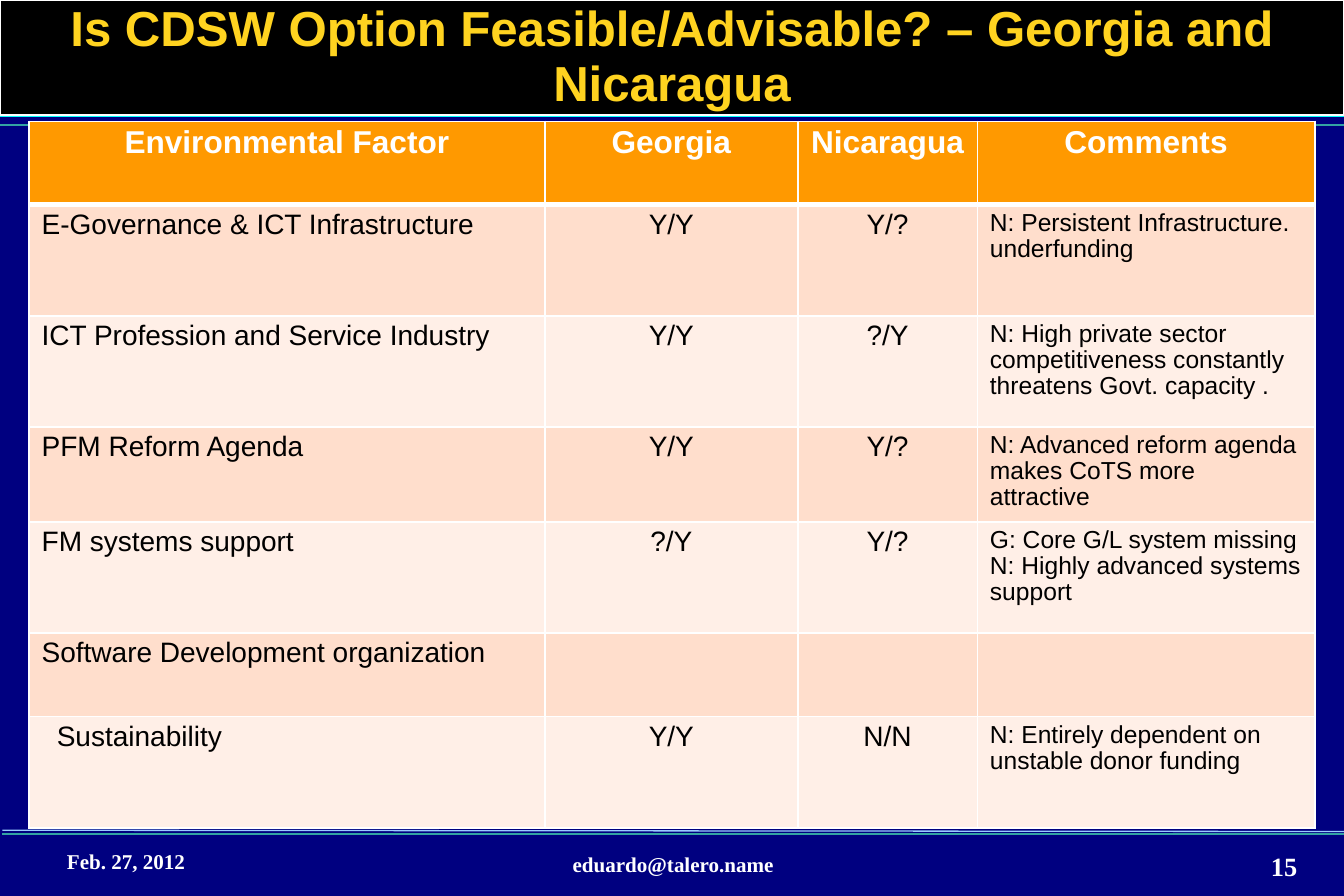
from dataclasses import dataclass

from lxml import etree
from pptx import Presentation
from pptx.dml.color import RGBColor
from pptx.enum.shapes import MSO_CONNECTOR
from pptx.enum.text import MSO_ANCHOR, MSO_AUTO_SIZE, PP_ALIGN
from pptx.oxml.ns import qn
from pptx.util import Inches, Pt

LEFT, CENTER, RIGHT = PP_ALIGN.LEFT, PP_ALIGN.CENTER, PP_ALIGN.RIGHT
MIDDLE = MSO_ANCHOR.MIDDLE
NO_AUTOFIT = MSO_AUTO_SIZE.NONE
STRAIGHT = MSO_CONNECTOR.STRAIGHT

NAVY, BLACK, WHITE, YELLOW = "000080", "000000", "FFFFFF", "FFD320"
HEADER_FILL = "FF9900"
BAND_FILLS = ("FFDECC", "FFEFE7")
SANS, SERIF = "Arial", "Times New Roman"
SLIDE_WIDTH, SLIDE_HEIGHT = 10.63, 7.09


@dataclass(frozen=True)
class TextStyle:
    size: float
    color: str = BLACK
    bold: bool = False
    font: str = SANS
    align: PP_ALIGN = LEFT
    spacing: float = 0.93


@dataclass(frozen=True)
class Rule:
    left: float
    top: float
    right: float
    bottom: float
    color: str


@dataclass(frozen=True)
class FooterText:
    text: str
    left: float
    top: float
    width: float
    height: float
    size: float
    align: PP_ALIGN


@dataclass(frozen=True)
class FactorRow:
    factor: str
    height: float
    georgia: str = ""
    nicaragua: str = ""
    comments: str = ""
    indent: float = 0


TITLE = TextStyle(28, YELLOW, True, align=CENTER)
HEADER = TextStyle(18, WHITE, True, align=CENTER)
FACTOR = TextStyle(16)
RATING = TextStyle(16, align=CENTER)
COMMENT = TextStyle(14)
COLUMN_STYLES = (FACTOR, RATING, RATING, COMMENT)
COLUMN_WIDTHS = (4.08, 2, 1.42, 2.67)
HEADINGS = ("Environmental Factor", "Georgia", "Nicaragua", "Comments")
SHORT_ROW, TALL_ROW = 0.66, 0.88

FACTOR_ROWS = (
    FactorRow("E-Governance & ICT Infrastructure", TALL_ROW, "Y/Y", "Y/?",
              "N: Persistent Infrastructure. underfunding"),
    FactorRow("ICT Profession and Service Industry", TALL_ROW, "Y/Y", "?/Y",
              "N: High private sector competitiveness constantly threatens Govt. capacity ."),
    FactorRow("PFM Reform Agenda", SHORT_ROW, "Y/Y", "Y/?",
              "N: Advanced reform agenda makes CoTS more attractive"),
    FactorRow("FM systems support", TALL_ROW, "?/Y", "Y/?",
              "G: Core G/L system missing\nN: Highly advanced systems support"),
    FactorRow("Software Development organization", SHORT_ROW),
    FactorRow("Sustainability", TALL_ROW, "Y/Y", "N/N",
              "N: Entirely dependent on unstable donor funding", indent=0.12),
)

RULES = (
    Rule(0, 0.92, SLIDE_WIDTH, 0.92, "00FFFF"),
    Rule(0, 0.99, SLIDE_WIDTH, 0.99, "33A3A3"),
    Rule(0.02, 6.57, 10.65, 6.58, "99CCFF"),
    Rule(0.02, 6.6, 10.65, 6.6, "33A3A3"),
)

FOOTER_TEXTS = (
    FooterText("15", 9.25, 6.75, 1.01, 0.24, 15, RIGHT),
    FooterText("eduardo@talero.name", 3.64, 6.75, 3.37, 0.29, 12, CENTER),
    FooterText("Feb. 27, 2012", 0.53, 6.73, 2.47, 0.29, 12, LEFT),
)


def rgb(color: str) -> RGBColor:
    return RGBColor.from_string(color)


def write_text(frame, text: str, style: TextStyle) -> None:
    """Write one paragraph for each line of text."""
    for index, line in enumerate(text.split("\n")):
        paragraph = frame.add_paragraph() if index else frame.paragraphs[0]
        paragraph.alignment = style.align
        paragraph.line_spacing = style.spacing
        run = paragraph.add_run()
        run.text = line
        run.font.name = style.font
        run.font.size = Pt(style.size)
        run.font.bold = style.bold
        run.font.color.rgb = rgb(style.color)


def clear_margins(frame) -> None:
    frame.margin_left = frame.margin_right = 0
    frame.margin_top = frame.margin_bottom = 0


def add_title(slide, text: str) -> None:
    title = slide.shapes.title
    title.left, title.top = Inches(0), Inches(0)
    title.width, title.height = Inches(SLIDE_WIDTH), Inches(0.91)
    title.fill.solid()
    title.fill.fore_color.rgb = rgb(BLACK)
    title.line.color.rgb = rgb(WHITE)
    title.line.width = Pt(0.75)
    frame = title.text_frame
    clear_margins(frame)
    frame.word_wrap = True
    frame.auto_size = NO_AUTOFIT
    frame.vertical_anchor = MIDDLE
    write_text(frame, text, TITLE)


def add_rule(slide, rule: Rule) -> None:
    connector = slide.shapes.add_connector(
        STRAIGHT, Inches(rule.left), Inches(rule.top),
        Inches(rule.right), Inches(rule.bottom))
    connector.line.color.rgb = rgb(rule.color)
    connector.line.width = Pt(0.75)
    etree.SubElement(connector._element.spPr, qn("a:effectLst"))


def add_footer_text(slide, footer: FooterText) -> None:
    box = slide.shapes.add_textbox(Inches(footer.left), Inches(footer.top),
                                   Inches(footer.width), Inches(footer.height))
    clear_margins(box.text_frame)
    box.text_frame.word_wrap = True
    write_text(box.text_frame, footer.text,
               TextStyle(footer.size, WHITE, True, SERIF, footer.align, 0.95))


def format_cell(cell, fill: str, top: float = 1, bottom: float = 1) -> None:
    """Draw white borders, with widths in points, and fill the cell."""
    properties = cell._tc.get_or_add_tcPr()
    for side, width in (("L", 1), ("R", 1), ("T", top), ("B", bottom)):
        border = etree.SubElement(properties, qn(f"a:ln{side}"), w=str(Pt(width)))
        solid = etree.SubElement(border, qn("a:solidFill"))
        etree.SubElement(solid, qn("a:srgbClr"), val=WHITE)
    cell.fill.solid()
    cell.fill.fore_color.rgb = rgb(fill)


def add_factor_table(slide) -> None:
    heights = [SHORT_ROW] + [row.height for row in FACTOR_ROWS]
    table = slide.shapes.add_table(
        len(heights), len(HEADINGS), Inches(0.23), Inches(0.96),
        Inches(sum(COLUMN_WIDTHS)), Inches(sum(heights))).table
    for column, width in zip(table.columns, COLUMN_WIDTHS):
        column.width = Inches(width)
    for table_row, height in zip(table.rows, heights):
        table_row.height = Inches(height)

    for column, heading in enumerate(HEADINGS):
        cell = table.cell(0, column)
        format_cell(cell, HEADER_FILL, bottom=3)
        write_text(cell.text_frame, heading, HEADER)

    for index, row in enumerate(FACTOR_ROWS):
        texts = (row.factor, row.georgia, row.nicaragua, row.comments)
        for column, (text, style) in enumerate(zip(texts, COLUMN_STYLES)):
            cell = table.cell(index + 1, column)
            format_cell(cell, BAND_FILLS[index % 2], top=1 if index else 3)
            if text:
                write_text(cell.text_frame, text, style)
        table.cell(index + 1, 0).margin_left = Inches(0.1 + row.indent)


def main() -> None:
    presentation = Presentation()
    presentation.slide_width = Inches(SLIDE_WIDTH)
    presentation.slide_height = Inches(SLIDE_HEIGHT)
    slide = presentation.slides.add_slide(presentation.slide_layouts[5])
    slide.background.fill.solid()
    slide.background.fill.fore_color.rgb = rgb(NAVY)
    for rule in RULES:
        add_rule(slide, rule)
    for footer in FOOTER_TEXTS:
        add_footer_text(slide, footer)
    add_title(slide, "Is CDSW Option Feasible/Advisable? – Georgia and Nicaragua")
    add_factor_table(slide)
    presentation.save("out.pptx")


if __name__ == "__main__":
    main()
